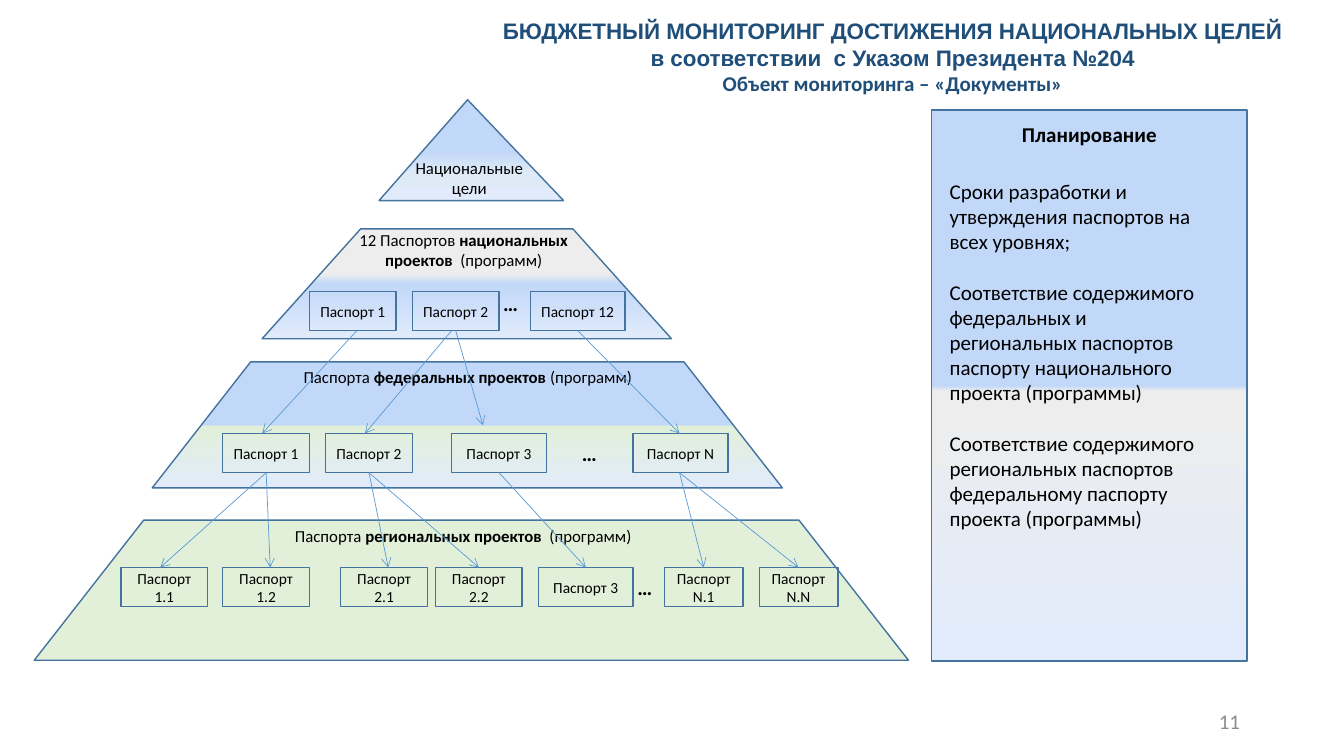
from dataclasses import dataclass

from lxml import etree
from pptx import Presentation
from pptx.dml.color import RGBColor
from pptx.enum.shapes import MSO_CONNECTOR as Connector, MSO_SHAPE as Shape
from pptx.enum.text import MSO_ANCHOR as Anchor, MSO_AUTO_SIZE as AutoSize, PP_ALIGN as Align
from pptx.oxml import parse_xml
from pptx.oxml.ns import nsdecls, qn
from pptx.util import Inches, Pt


@dataclass(frozen=True)
class Theme:
    heading: str = "1F4E79"
    text: str = "000000"
    muted: str = "8C8C8C"
    outline: str = "43739E"
    arrow: str = "5B9BD5"
    blue: str = "C2D8F8"
    pale: str = "E1EBFB"
    ice: str = "DEEBF7"
    grey: str = "EDEDED"
    green: str = "E2F0D9"
    body_font: str = "Calibri"
    title_font: str = "Arial"
    title_size: int = 16
    body_size: int = 15
    tier_size: int = 12
    box_size: int = 11


THEME = Theme()
SLIDE_WIDTH, SLIDE_HEIGHT = 13.33, 7.5
BOX_HEIGHT = 0.39
ROW_TOPS = (2.89, 4.3, 5.63)

TITLE = ["БЮДЖЕТНЫЙ МОНИТОРИНГ ДОСТИЖЕНИЯ НАЦИОНАЛЬНЫХ ЦЕЛЕЙ",
         "в соответствии  с Указом Президента №204"]
SUBTITLE = "Объект мониторинга – «Документы»"
PANEL_HEADING = "Планирование"
PANEL_POINTS = [
    "Сроки разработки и утверждения паспортов на всех уровнях;",
    "Соответствие содержимого федеральных и региональных паспортов "
    "паспорту национального проекта (программы)",
    "Соответствие содержимого региональных паспортов федеральному паспорту "
    "проекта (программы)",
]
PAGE_NUMBER = "11"

# preset shape, place (left, top, width, height), adjustment, gradient stops
TIERS = [
    (Shape.ISOSCELES_TRIANGLE, (3.76, 0.99, 1.83, 1.0), 0.48,
     [(50, THEME.blue), (73, THEME.ice), (100, THEME.pale)]),
    (Shape.TRAPEZOID, (2.6, 2.27, 4.06, 1.09), 0.897,
     [(41, THEME.grey), (50, THEME.blue), (100, THEME.pale)]),
    (Shape.TRAPEZOID, (1.51, 3.59, 6.25, 1.25), 0.781,
     [(50, THEME.blue), (51, THEME.green), (100, THEME.pale)]),
    (Shape.TRAPEZOID, (0.34, 5.16, 8.67, 1.39), 0.781, [(0, THEME.green), (100, THEME.green)]),
]

# place, anchor, lines of (text, bold) runs
TIER_LABELS = [
    ((3.99, 1.39, 1.33, 0.74), Anchor.MIDDLE, [[("Национальные цели", False)]]),
    ((3.31, 2.23, 2.58, 0.5), Anchor.TOP,
     [[("12 Паспортов ", False), ("национальных", True)],
      [("проектов ", True), (" (программ)", False)]]),
    ((2.53, 3.59, 4.22, 0.3), Anchor.TOP,
     [[("Паспорта ", False), ("федеральных проектов ", True), ("(программ)", False)]]),
    ((1.43, 5.17, 6.33, 0.3), Anchor.TOP,
     [[("Паспорта ", False), ("региональных проектов ", True), (" (программ)", False)]]),
]

# one list per row: (number, left, width)
PASSPORTS = [
    [("1", 3.07, 0.86), ("2", 4.09, 0.86), ("12", 5.26, 0.94)],
    [("1", 2.21, 0.86), ("2", 3.23, 0.86), ("3", 4.48, 0.94), ("N", 6.28, 0.94)],
    [("1.1", 1.2, 0.86), ("1.2", 2.21, 0.86), ("2.1", 3.38, 0.86), ("2.2", 4.32, 0.86),
     ("3", 5.34, 0.94), ("N.1", 6.59, 0.78), ("N.N", 7.53, 0.78)],
]
ELLIPSES = [(4.95, 2.89), (5.73, 4.38), (6.28, 5.7)]

# arrows from each row to the next: (start x, end x, gap above the next row)
ARROWS = [
    [(3.54, 2.6, 0), (4.48, 3.62, 0), (4.52, 4.79, 0.08), (5.73, 6.74, 0)],
    [(2.64, 1.59, 0), (2.64, 2.68, 0), (3.66, 3.85, 0), (3.66, 4.75, 0),
     (4.95, 5.81, 0), (6.74, 6.98, 0), (6.74, 7.92, 0)],
]


def inches(place):
    return [Inches(length) for length in place]


def add_run(paragraph, text, size, bold=False, color=THEME.text, font=THEME.body_font):
    run = paragraph.add_run()
    run.text = text
    run.font.size = Pt(size)
    run.font.bold = bold
    run.font.name = font
    run.font.color.rgb = RGBColor.from_string(color)


def prepare_frame(shape, anchor, inset=(0.1, 0.05)):
    """Set wrapping, anchor and insets; return the text frame."""
    frame = shape.text_frame
    frame.word_wrap = True
    frame.auto_size = AutoSize.NONE
    frame.vertical_anchor = anchor
    frame.margin_left = frame.margin_right = Inches(inset[0])
    frame.margin_top = frame.margin_bottom = Inches(inset[1])
    return frame


def add_text(slide, place, anchor, align, **options):
    """Add an empty text box; return its first paragraph."""
    frame = prepare_frame(slide.shapes.add_textbox(*inches(place)), anchor, **options)
    frame.paragraphs[0].alignment = align
    return frame.paragraphs[0]


def add_outlined(slide, preset, place):
    shape = slide.shapes.add_shape(preset, *inches(place))
    shape.shadow.inherit = False
    shape.fill.background()
    shape.line.color.rgb = RGBColor.from_string(THEME.outline)
    shape.line.width = Pt(1)
    return shape


def fill_down(shape, stops):
    """Fill from top to bottom with (percent, colour) stops."""
    marks = "".join(f'<a:gs pos="{percent * 1000}"><a:srgbClr val="{color}"/></a:gs>'
                    for percent, color in stops)
    gradient = parse_xml(f'<a:gradFill {nsdecls("a")} rotWithShape="1"><a:gsLst>{marks}</a:gsLst>'
                         '<a:lin ang="5400000" scaled="0"/></a:gradFill>')
    properties = shape.element.spPr
    properties.replace(properties.find(qn("a:noFill")), gradient)


def add_arrow(slide, start, end):
    connector = slide.shapes.add_connector(Connector.STRAIGHT, *inches(start + end))
    connector.line.color.rgb = RGBColor.from_string(THEME.arrow)
    connector.line.width = Pt(0.5)
    etree.SubElement(connector.line._get_or_add_ln(), qn("a:tailEnd"), type="arrow")
    etree.SubElement(connector.element.spPr, qn("a:effectLst"))


def add_title(slide):
    title = slide.shapes.title
    title.left, title.top, title.width, title.height = inches((4.75, 0.13, 8.21, 0.86))
    frame = prepare_frame(title, Anchor.MIDDLE)
    lines = [(text, THEME.title_size, THEME.title_font) for text in TITLE]
    lines.append((SUBTITLE, THEME.body_size, THEME.body_font))
    for index, (text, size, font) in enumerate(lines):
        paragraph = frame.add_paragraph() if index else frame.paragraphs[0]
        paragraph.alignment = Align.CENTER
        add_run(paragraph, text, size, True, THEME.heading, font)


def add_panel(slide):
    panel = add_outlined(slide, Shape.RECTANGLE, (9.24, 1.09, 3.13, 5.47))
    fill_down(panel, [(50, THEME.blue), (51, THEME.grey), (100, THEME.pale)])
    heading = prepare_frame(panel, Anchor.TOP, (0.1, 0.12)).paragraphs[0]
    heading.alignment = Align.CENTER
    add_run(heading, PANEL_HEADING, THEME.body_size, True)

    points = slide.shapes.add_textbox(*inches((9.32, 1.72, 2.73, 3.89)))
    frame = prepare_frame(points, Anchor.TOP)
    for index, text in enumerate(PANEL_POINTS):
        paragraph = frame.add_paragraph() if index else frame.paragraphs[0]
        if index:
            paragraph.space_before = Pt(18)
        add_run(paragraph, text, THEME.body_size)


def add_pyramid(slide):
    for preset, place, adjustment, stops in TIERS:
        tier = add_outlined(slide, preset, place)
        tier.adjustments[0] = adjustment
        fill_down(tier, stops)
    for place, anchor, lines in TIER_LABELS:
        paragraph = add_text(slide, place, anchor, Align.CENTER)
        for index, runs in enumerate(lines):
            if index:
                paragraph.add_line_break()
            for text, bold in runs:
                add_run(paragraph, text, THEME.tier_size, bold)


def add_passports(slide):
    for top, row in zip(ROW_TOPS, PASSPORTS):
        for number, left, width in row:
            box = add_outlined(slide, Shape.RECTANGLE, (left, top, width, BOX_HEIGHT))
            paragraph = prepare_frame(box, Anchor.MIDDLE, (0.05, 0.05)).paragraphs[0]
            paragraph.alignment = Align.CENTER
            if "." in number:
                add_run(paragraph, "Паспорт", THEME.box_size)
                paragraph.add_line_break()
                add_run(paragraph, number, THEME.box_size)
            else:
                add_run(paragraph, f"Паспорт {number}", THEME.box_size)
    for left, top in ELLIPSES:
        paragraph = add_text(slide, (left, top, 0.23, 0.24), Anchor.MIDDLE, Align.CENTER,
                             inset=(0, 0))
        add_run(paragraph, "…", THEME.body_size, True)
    for top, next_top, row in zip(ROW_TOPS, ROW_TOPS[1:], ARROWS):
        for start_x, end_x, gap in row:
            add_arrow(slide, (start_x, top + BOX_HEIGHT), (end_x, next_top - gap))


def main():
    presentation = Presentation()
    presentation.slide_width, presentation.slide_height = inches((SLIDE_WIDTH, SLIDE_HEIGHT))
    slide = presentation.slides.add_slide(presentation.slide_layouts[5])
    add_title(slide)
    add_panel(slide)
    add_pyramid(slide)
    add_passports(slide)
    page = add_text(slide, (9.42, 6.95, 3, 0.4), Anchor.MIDDLE, Align.RIGHT, inset=(0.12, 0.06))
    add_run(page, PAGE_NUMBER, THEME.body_size, color=THEME.muted)
    presentation.save("out.pptx")


if __name__ == "__main__":
    main()
